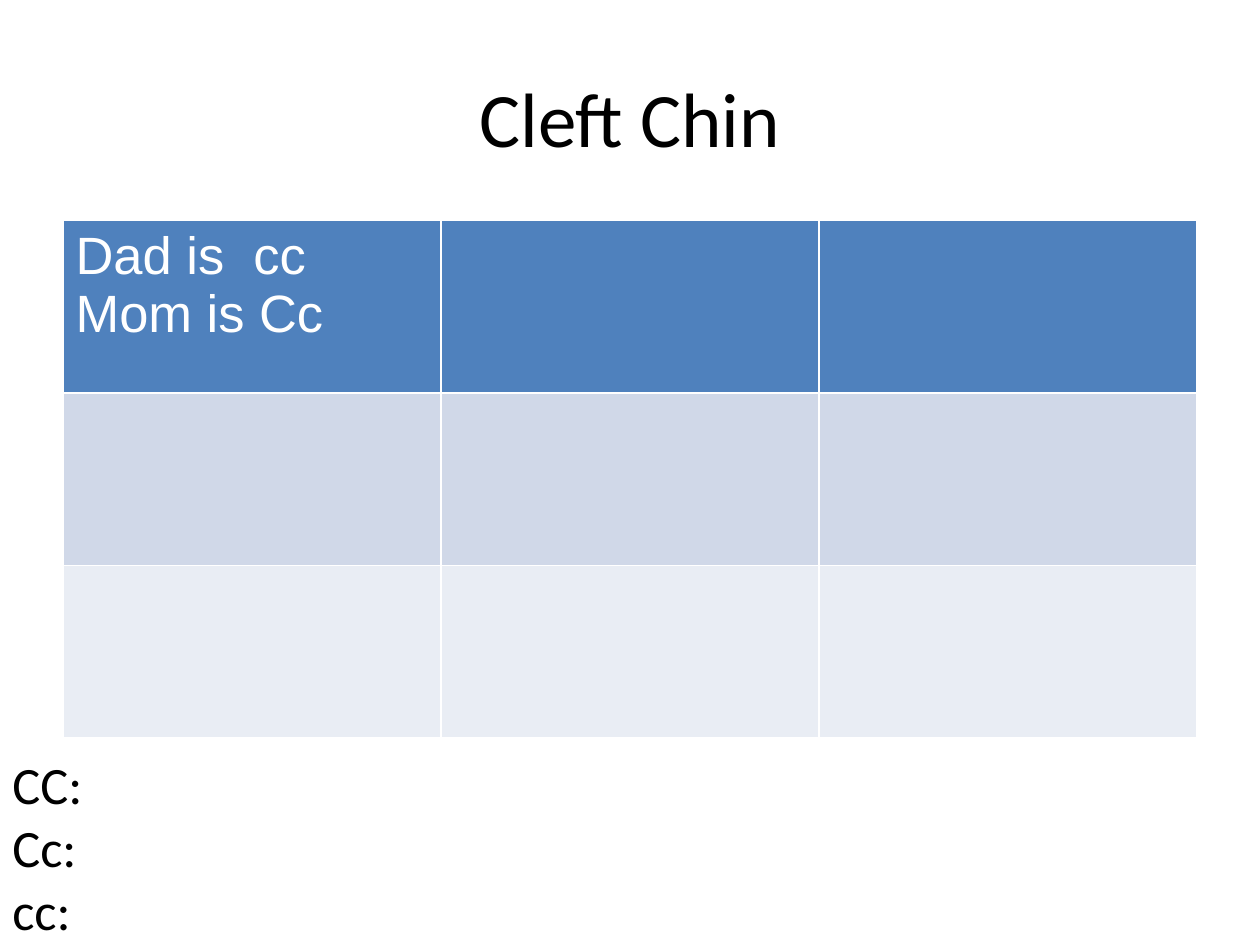
from dataclasses import dataclass

from pptx import Presentation
from pptx.dml.color import RGBColor as Rgb
from pptx.enum.text import MSO_ANCHOR as Anchor, PP_ALIGN as Align
from pptx.util import Inches, Pt


@dataclass(frozen=True)
class Theme:
    head: str = "Calibri"
    cell: str = "Arial"
    big: int = 44
    body: int = 30
    ink: str = "000000"
    white: str = "FFFFFF"
    rows: tuple = ("4F81BD", "D0D8E8", "E9EDF4")


THEME = Theme()
WIDE, HIGH = 10, 7.5
EDGE = WIDE / 20
COLS = 3
ROW = 1.37


def write(frame, lines, face, size, color, align=Align.LEFT):
    frame.text = "\n".join(lines)
    for para in frame.paragraphs:
        para.alignment = align
        font = para.font
        font.name, font.size, font.bold = face, Pt(size), False
        font.color.rgb = Rgb.from_string(color)


def add_text(slide, box, lines, size, align=Align.LEFT, anchor=Anchor.TOP):
    frame = slide.shapes.add_textbox(*map(Inches, box)).text_frame
    frame.word_wrap = True
    frame.vertical_anchor = anchor
    write(frame, lines, THEME.head, size, THEME.ink, align)


def add_square(slide, box, cross):
    """Punnett square with the parents' genes in its corner cell."""
    fills = THEME.rows
    grid = slide.shapes.add_table(len(fills), COLS, *map(Inches, box)).table
    for row, color in zip(grid.rows, fills):
        for cell in row.cells:
            cell.fill.solid()
            cell.fill.fore_color.rgb = Rgb.from_string(color)
    write(grid.cell(0, 0).text_frame, cross, THEME.cell, THEME.body, THEME.white)


def main():
    deck = Presentation()
    deck.slide_width, deck.slide_height = Inches(WIDE), Inches(HIGH)
    slide = deck.slides.add_slide(deck.slide_layouts[6])
    span = WIDE - 2 * EDGE
    add_text(slide, (EDGE, HIGH * 0.04, span, HIGH / 6), ["Cleft Chin"],
             THEME.big, Align.CENTER, Anchor.MIDDLE)
    add_square(slide, (EDGE, 1.75, span, ROW * len(THEME.rows)),
               ["Dad is  cc", "Mom is Cc"])
    add_text(slide, (0, 5.92, WIDE / 4, 1.62), ["CC:", "Cc:", "cc:"], THEME.body)
    deck.save("out.pptx")


if __name__ == "__main__":
    main()
